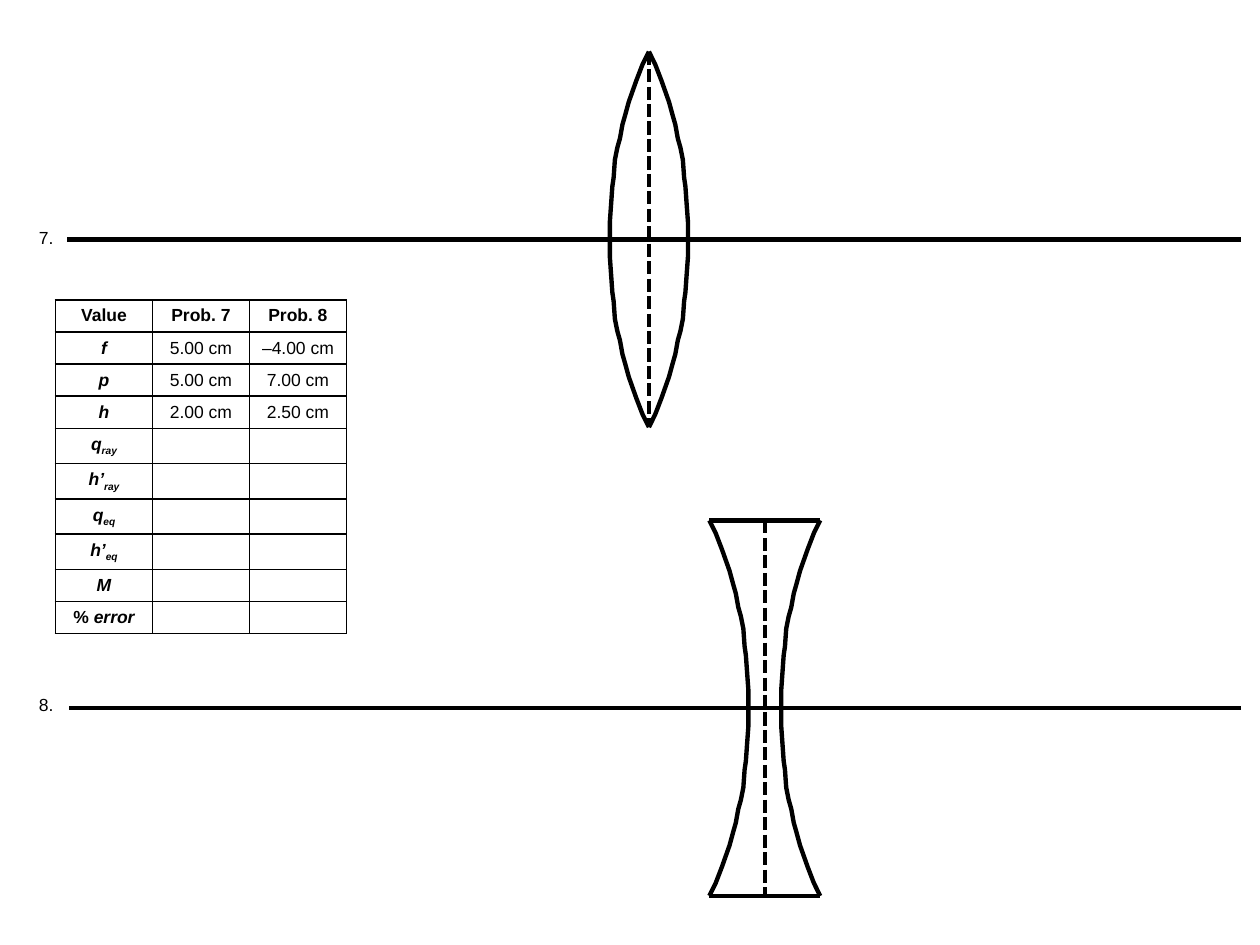
from pptx import Presentation
from pptx import util as u
from pptx.dml.color import RGBColor
from pptx.enum import dml, shapes, text
from pptx.oxml.ns import qn
from lxml import etree

THEME = {"ink": "000000", "font": "Arial", "size": 10, "line": 2.5, "border": 1}

HEAD = ["Value", "Prob. 7", "Prob. 8"]
GIVEN = [
    ("f", "5.00 cm", "–4.00 cm"),
    ("p", "5.00 cm", "7.00 cm"),
    ("h", "2.00 cm", "2.50 cm"),
]
UNKNOWN = [("q", "ray"), ("h’", "ray"), ("q", "eq"), ("h’", "eq"), ("M", "")]
TABLE = {"left": 0.44, "top": 2.38, "col": 0.77, "row": 0.255, "sub_row": 0.28}

AXES = [("7.", 0.53, 1.90, 1.75), ("8.", 0.55, 5.62, 5.46)]
AXIS_END = 9.85

ARC = [(0, 0), (0.05, 0.1), (0.1, 0.23), (0.16, 0.4), (0.19, 0.51), (0.21, 0.58),
       (0.23, 0.69), (0.25, 0.76), (0.27, 0.86), (0.28, 1), (0.29, 1.07),
       (0.3, 1.21), (0.31, 1.35), (0.31, 1.49)]
HALF_HEIGHT = 1.49
LENSES = [
    {"x": 5.15, "y": 1.9, "tip": 0, "bulge": 1},
    {"x": 6.07, "y": 5.62, "tip": 0.44, "bulge": -1},
]


def ink():
    return RGBColor.from_string(THEME["ink"])


def add_text(p, words, bold=False, italic=False, sub=False):
    r = p.add_run()
    r.text = words
    f = r.font
    f.name, f.size, f.bold, f.italic = THEME["font"], u.Pt(THEME["size"]), bold, italic
    f.color.rgb = ink()
    if sub:
        f._element.set("baseline", "-25000")


def style_line(sp, dashed=False):
    sp.line.color.rgb = ink()
    sp.line.width = u.Pt(THEME["line"])
    if dashed:
        sp.line.dash_style = dml.MSO_LINE.SQUARE_DOT


def add_line(parent, x1, y1, x2, y2, dashed=False):
    ends = [u.Inches(v) for v in (x1, y1, x2, y2)]
    sp = parent.add_connector(shapes.MSO_CONNECTOR.STRAIGHT, *ends)
    style_line(sp, dashed)
    etree.SubElement(sp._element.spPr, qn("a:effectLst"))


def add_arc(parent, points):
    pts = [(u.Inches(x), u.Inches(y)) for x, y in points]
    fb = parent.build_freeform(*pts[0])
    fb.add_line_segments(pts[1:], close=False)
    sp = fb.convert_to_shape()
    sp.shadow.inherit = False
    sp.fill.background()
    style_line(sp)


def add_lens(s, x, y, tip, bulge):
    parent = s.shapes.add_group_shape().shapes
    top, bottom = y - HALF_HEIGHT, y + HALF_HEIGHT
    for side in (1, -1):
        for end in (-1, 1):
            add_arc(parent, [(x + side * (tip + bulge * dx), y + end * (HALF_HEIGHT - dy))
                             for dx, dy in ARC])
    add_line(parent, x, top, x, bottom, dashed=True)
    if tip:
        for edge in (top, bottom):
            add_line(parent, x - tip, edge, x + tip, edge)


def add_axis(s, label, left, y, label_top):
    add_line(s.shapes, AXIS_END, y, left, y)
    box = [u.Inches(v) for v in (0.21, label_top, 0.32, 0.27)]
    tf = s.shapes.add_textbox(*box).text_frame
    tf.word_wrap = False
    tf.auto_size = text.MSO_AUTO_SIZE.SHAPE_TO_FIT_TEXT
    add_text(tf.paragraphs[0], label)


def border_cell(cell):
    tcPr = cell._tc.get_or_add_tcPr()
    for i, side in enumerate(("lnL", "lnR", "lnT", "lnB")):
        ln = etree.Element(qn("a:" + side), w=str(u.Pt(THEME["border"])))
        fill = etree.SubElement(ln, qn("a:solidFill"))
        etree.SubElement(fill, qn("a:srgbClr"), val=THEME["ink"])
        tcPr.insert(i, ln)


def fill_cell(cell, runs):
    cell.fill.background()
    border_cell(cell)
    cell.margin_left = cell.margin_right = u.Inches(0.05)
    cell.margin_top = cell.margin_bottom = u.Inches(0.04)
    cell.vertical_anchor = text.MSO_ANCHOR.MIDDLE
    p = cell.text_frame.paragraphs[0]
    p.alignment = text.PP_ALIGN.CENTER
    for words, fmt in runs:
        add_text(p, words, **fmt)
    if not runs:
        etree.SubElement(p._p, qn("a:endParaRPr"), sz=str(THEME["size"] * 100))


def table_rows():
    bold = {"bold": True}
    symbol = {"bold": True, "italic": True}
    rows = [[[(h, bold)] for h in HEAD]]
    rows += [[[(name, symbol)], [(a, {})], [(b, {})]] for name, a, b in GIVEN]
    for name, sub in UNKNOWN:
        runs = [(name, symbol)]
        if sub:
            runs.append((sub, {**symbol, "sub": True}))
        rows.append([runs, [], []])
    rows.append([[("% ", bold), ("error", symbol)], [], []])
    return rows


def add_values(s):
    rows = table_rows()
    heights = [TABLE["sub_row"] if len(row[0]) > 1 and row[0][1][1].get("sub")
               else TABLE["row"] for row in rows]
    box = (TABLE["left"], TABLE["top"], TABLE["col"] * len(HEAD), sum(heights))
    tbl = s.shapes.add_table(len(rows), len(HEAD), *[u.Inches(v) for v in box]).table
    tbl.first_row = tbl.horz_banding = False
    for col in tbl.columns:
        col.width = u.Inches(TABLE["col"])
    for i, row in enumerate(rows):
        tbl.rows[i].height = u.Inches(heights[i])
        for j, runs in enumerate(row):
            fill_cell(tbl.cell(i, j), runs)


def main():
    prs = Presentation()
    prs.slide_width, prs.slide_height = u.Inches(10), u.Inches(7.5)
    s = prs.slides.add_slide(prs.slide_layouts[6])
    for axis in AXES:
        add_axis(s, *axis)
    add_values(s)
    for lens in LENSES:
        add_lens(s, **lens)
    prs.save("out.pptx")


if __name__ == "__main__":
    main()
